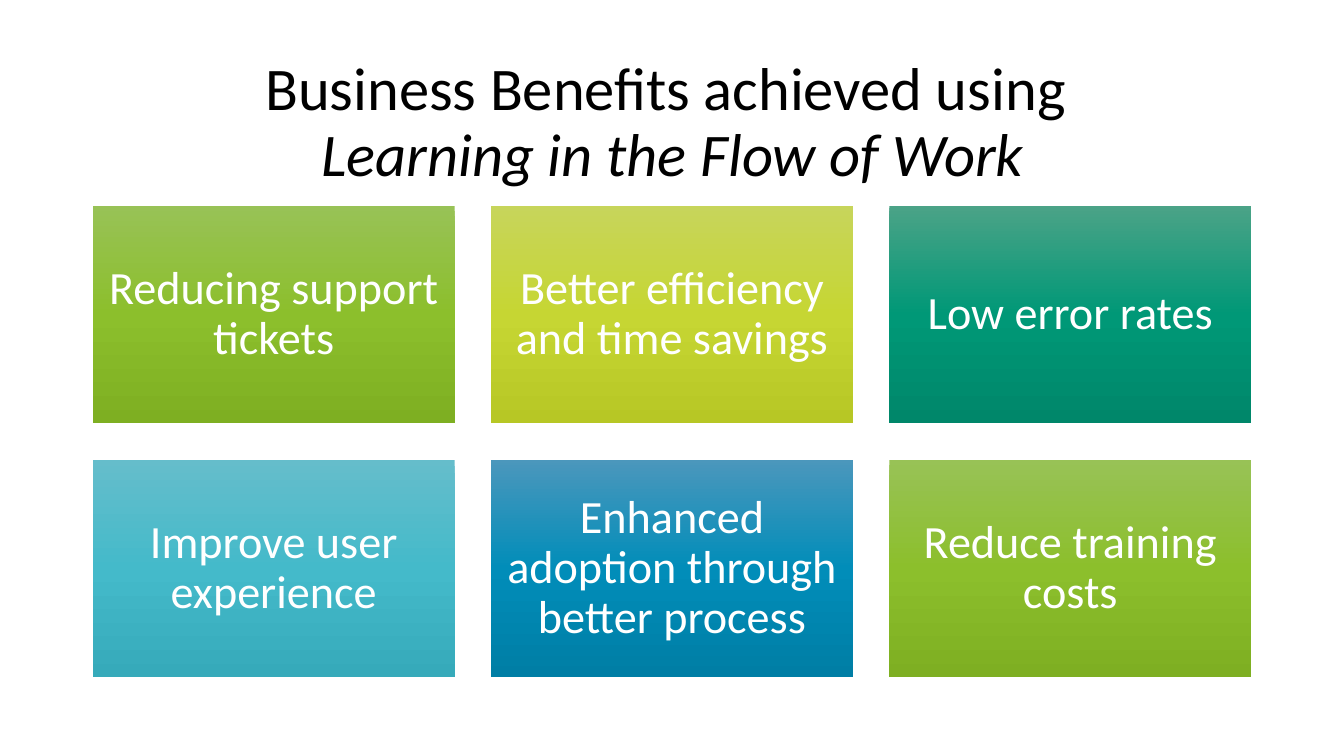
import copy
from dataclasses import dataclass

import pptx
import pptx.dml.color
import pptx.enum.shapes
import pptx.enum.text
import pptx.oxml.ns
import pptx.presentation
import pptx.shapes.autoshape
import pptx.slide
import pptx.text.text
import pptx.util

Inches = pptx.util.Inches


@dataclass(frozen=True)
class Theme:
    font: str = "Calibri"
    title_size: float = 43.2
    tile_size: float = 33
    title_color: str = "000000"
    tile_color: str = "FFFFFF"
    line_spacing: float = 0.9
    green: tuple[str, ...] = ("98C256", "8CBF2C", "7EAF22")
    lime: tuple[str, ...] = ("C7D55B", "C6D633", "B7C725")
    emerald: tuple[str, ...] = ("4BA387", "009877", "00876A")
    aqua: tuple[str, ...] = ("65BDCB", "44BACA", "36AABA")
    blue: tuple[str, ...] = ("4B97BC", "018DB9", "007EA5")


@dataclass(frozen=True)
class Benefit:
    text: str
    gradient: tuple[str, ...]


THEME = Theme()
BENEFITS = [
    Benefit("Reducing support tickets", THEME.green),
    Benefit("Better efficiency and time savings", THEME.lime),
    Benefit("Low error rates", THEME.emerald),
    Benefit("Improve user experience", THEME.aqua),
    Benefit("Enhanced adoption through better process", THEME.blue),
    Benefit("Reduce training costs", THEME.green),
]
COLUMNS = 3
GRID_LEFT, GRID_TOP = 0.92, 2.04
TILE_WIDTH, TILE_HEIGHT = 3.59, 2.16
GAP = 0.36
TILE_INSET = 0.14


def format_paragraph(p: pptx.text.text._Paragraph, size: float, color: str) -> None:
    p.alignment = pptx.enum.text.PP_ALIGN.CENTER
    p.line_spacing = THEME.line_spacing
    for r in p.runs:
        r.font.name = THEME.font
        r.font.size = pptx.util.Pt(size)
        r.font.color.rgb = pptx.dml.color.RGBColor.from_string(color)


def fill_gradient(sp: pptx.shapes.autoshape.Shape, colors: tuple[str, ...]) -> None:
    sp.fill.gradient()
    sp.fill.gradient_angle = 270
    stop_list = next(sp.element.iter(pptx.oxml.ns.qn("a:gsLst")))
    stop_list.append(copy.deepcopy(stop_list[0]))
    for i, (stop, color) in enumerate(zip(sp.fill.gradient_stops, colors)):
        stop.position = i / (len(colors) - 1)
        stop.color.rgb = pptx.dml.color.RGBColor.from_string(color)


def add_title(s: pptx.slide.Slide) -> None:
    sp = s.shapes.title
    sp.left, sp.top = Inches(0.43), Inches(0.61)
    sp.width, sp.height = Inches(12.48), Inches(1.24)
    tf = sp.text_frame
    tf.auto_size = pptx.enum.text.MSO_AUTO_SIZE.NONE
    tf.vertical_anchor = pptx.enum.text.MSO_ANCHOR.MIDDLE
    p = tf.paragraphs[0]
    p.text = "Business Benefits achieved using \vLearning in the Flow of Work"
    format_paragraph(p, THEME.title_size, THEME.title_color)
    p.runs[-1].font.italic = True


def add_tile(s: pptx.slide.Slide, index: int, benefit: Benefit) -> None:
    row, column = divmod(index, COLUMNS)
    sp = s.shapes.add_shape(
        pptx.enum.shapes.MSO_SHAPE.RECTANGLE,
        Inches(GRID_LEFT + column * (TILE_WIDTH + GAP)),
        Inches(GRID_TOP + row * (TILE_HEIGHT + GAP)),
        Inches(TILE_WIDTH),
        Inches(TILE_HEIGHT),
    )
    sp.shadow.inherit = False
    sp.line.fill.background()
    fill_gradient(sp, benefit.gradient)
    tf = sp.text_frame
    tf.word_wrap = True
    tf.vertical_anchor = pptx.enum.text.MSO_ANCHOR.MIDDLE
    tf.margin_left = tf.margin_right = Inches(TILE_INSET)
    tf.margin_top = tf.margin_bottom = Inches(TILE_INSET)
    tf.text = benefit.text
    format_paragraph(tf.paragraphs[0], THEME.tile_size, THEME.tile_color)


def main() -> None:
    prs = pptx.Presentation()
    prs.slide_width, prs.slide_height = Inches(13.33), Inches(7.5)
    s = prs.slides.add_slide(prs.slide_layouts.get_by_name("Title Only"))
    add_title(s)
    for index, benefit in enumerate(BENEFITS):
        add_tile(s, index, benefit)
    prs.save("out.pptx")


if __name__ == "__main__":
    main()
